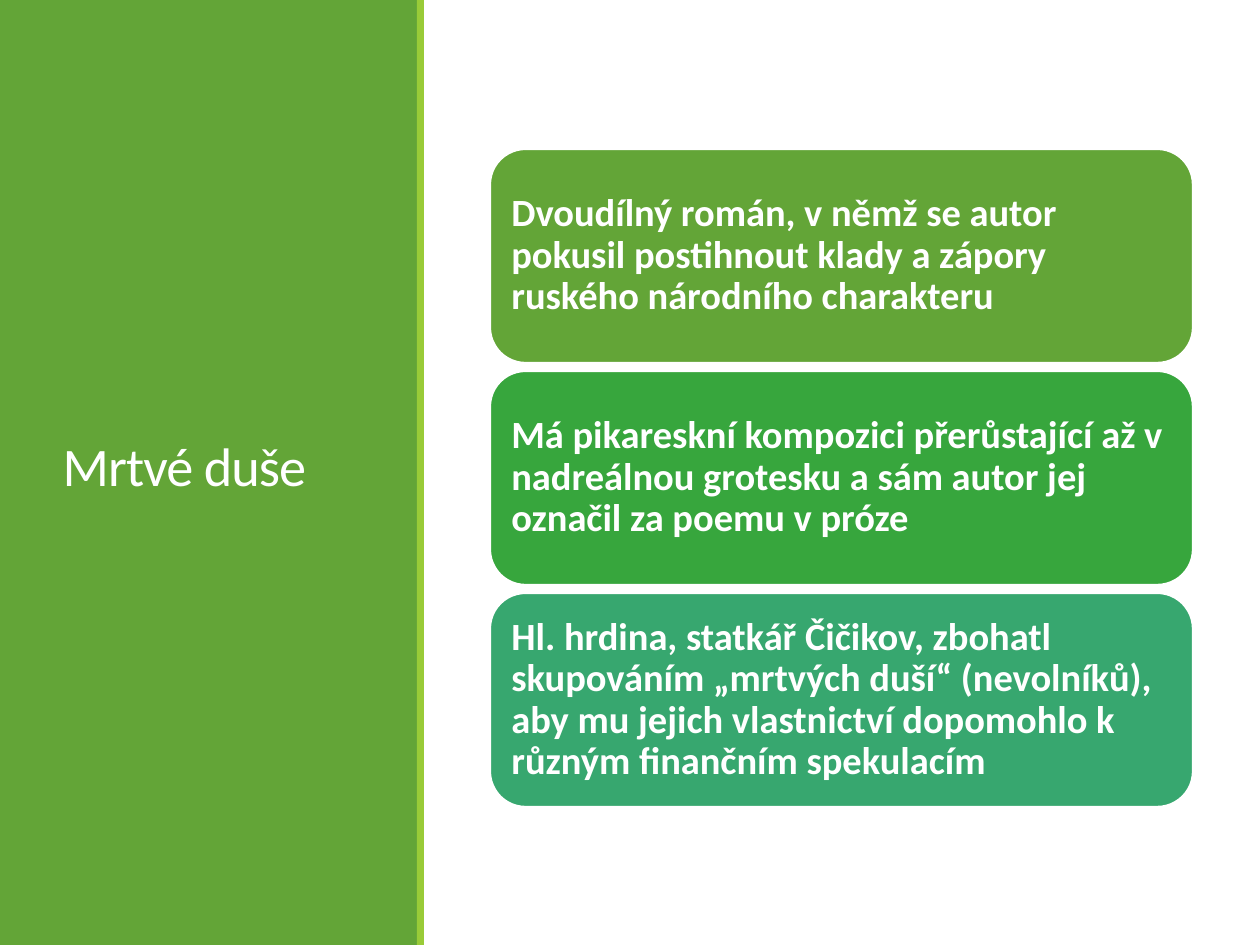
from pptx import Presentation
from pptx.dml.color import RGBColor
from pptx.enum.shapes import MSO_SHAPE
from pptx.enum.text import MSO_ANCHOR, MSO_AUTO_SIZE, PP_ALIGN
from pptx.util import Emu, Pt

EMU_PER_PX = 914400 / 126
WHITE, GREEN, LIME = "FFFFFF", "63A537", "99CB38"
CARDS = [
    ("Dvoudílný román, v němž se autor pokusil postihnout klady a zápory "
     "ruského národního charakteru", GREEN),
    ("Má pikareskní kompozici přerůstající až v nadreálnou grotesku a sám "
     "autor jej označil za poemu v próze", "37A63D"),
    ("Hl. hrdina, statkář Čičikov, zbohatl skupováním „mrtvých duší“ "
     "(nevolníků), aby mu jejich vlastnictví dopomohlo k různým finančním "
     "spekulacím", "37A76F"),
]


def px(length):
    return Emu(round(length * EMU_PER_PX))


def color(hex_code):
    return RGBColor.from_string(hex_code)


def write(frame, words, size, bold=False, line_spacing=0.9, tracking=0,
          inset=None):
    frame.word_wrap = True
    frame.auto_size = MSO_AUTO_SIZE.NONE
    frame.vertical_anchor = MSO_ANCHOR.MIDDLE
    if inset is not None:
        frame.margin_left = frame.margin_right = px(inset)
        frame.margin_top = frame.margin_bottom = px(inset)
    paragraph = frame.paragraphs[0]
    paragraph.alignment = PP_ALIGN.LEFT
    paragraph.line_spacing = line_spacing
    run = paragraph.add_run()
    run.text = words
    run.font.name = "Calibri"
    run.font.size = Pt(size)
    run.font.bold = bold
    run.font.color.rgb = color(WHITE)
    if tracking:
        run.font._element.set("spc", str(round(tracking * 100)))


class SlideBuilder:
    def __init__(self, slide):
        self.slide = slide

    def block(self, x, y, w, h, fill, preset=MSO_SHAPE.RECTANGLE):
        shape = self.slide.shapes.add_shape(preset, px(x), px(y), px(w), px(h))
        shape.shadow.inherit = False
        shape.fill.solid()
        shape.fill.fore_color.rgb = color(fill)
        shape.line.fill.background()
        return shape

    def card(self, x, y, w, h, words, fill):
        card = self.block(x, y, w, h, fill, MSO_SHAPE.ROUNDED_RECTANGLE)
        card.line.color.rgb = color(WHITE)
        card.line.width = Pt(1.25)
        write(card.text_frame, words, size=22, bold=True, inset=11)

    def title(self, x, y, w, h, words):
        title = self.slide.shapes.title
        title.left, title.top, title.width, title.height = map(px, (x, y, w, h))
        write(title.text_frame, words, size=31, line_spacing=0.85, tracking=-0.5)
        # Bring the title in front of the side panel
        title.element.getparent().append(title.element)


def main():
    deck = Presentation()
    deck.slide_width, deck.slide_height = px(1260), px(945)
    builder = SlideBuilder(deck.slides.add_slide(deck.slide_layouts[5]))

    # Side panel with its title and accent strip
    builder.block(0, 0, 418, 945, GREEN)
    builder.title(50, 72, 319, 795, "Mrtvé duše")
    builder.block(417, 0, 7, 945, LIME)

    # Stack of cards
    card_height, gap = 214, 8
    for row, (words, fill) in enumerate(CARDS):
        builder.card(490, 149 + row * (card_height + gap), 703, card_height,
                     words, fill)

    deck.save("out.pptx")


if __name__ == "__main__":
    main()
